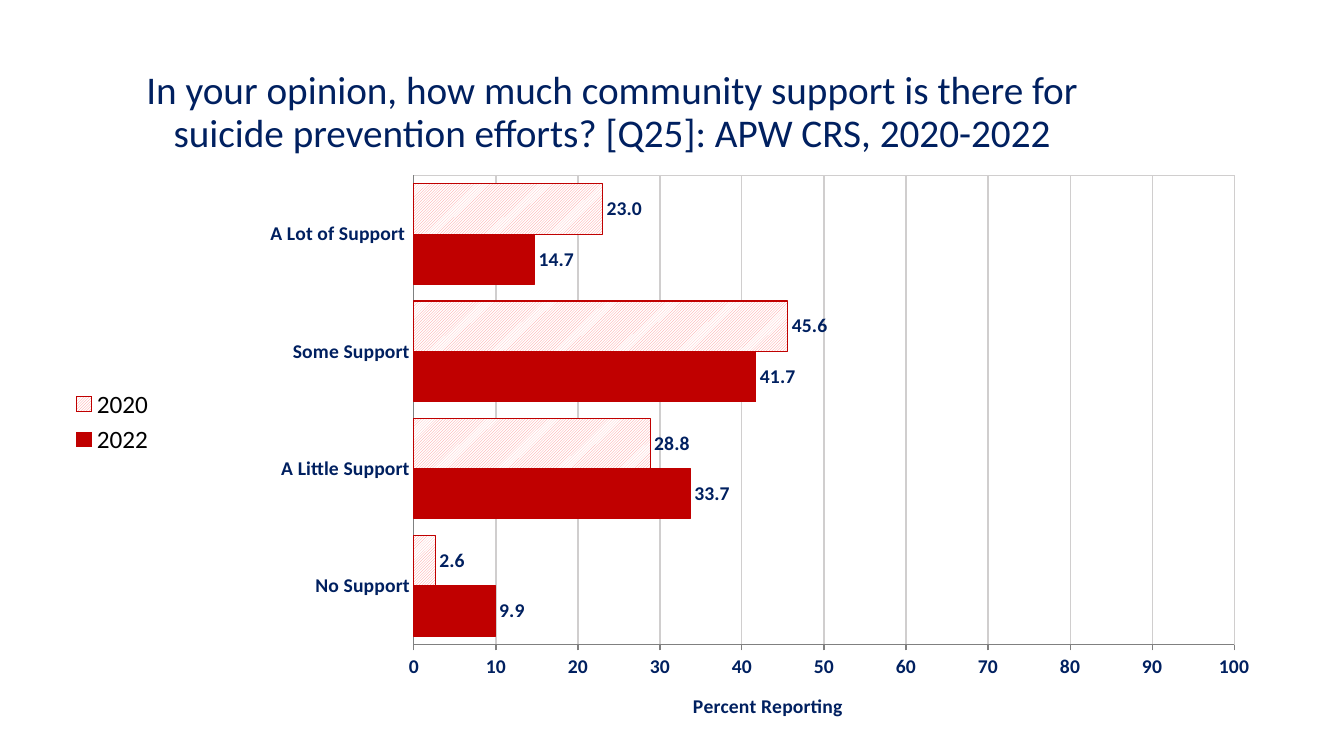
"""Build a slide comparing community support for suicide prevention, 2020 and 2022."""
from lxml import etree
from pptx import Presentation
from pptx.chart.data import CategoryChartData
from pptx.dml.color import RGBColor
from pptx.enum.chart import XL_CHART_TYPE, XL_LABEL_POSITION, XL_LEGEND_POSITION, XL_TICK_MARK
from pptx.enum.dml import MSO_PATTERN
from pptx.enum.text import MSO_ANCHOR, MSO_AUTO_SIZE, PP_ALIGN
from pptx.oxml import parse_xml
from pptx.oxml.ns import qn
from pptx.util import Inches, Pt

BAR = XL_CHART_TYPE.BAR_CLUSTERED
OUT_END = XL_LABEL_POSITION.OUTSIDE_END
LEFT = XL_LEGEND_POSITION.LEFT
NO_TICK, OUT_TICK = XL_TICK_MARK.NONE, XL_TICK_MARK.OUTSIDE
HATCH = MSO_PATTERN.LIGHT_UPWARD_DIAGONAL
MIDDLE, CENTER = MSO_ANCHOR.MIDDLE, PP_ALIGN.CENTER
NO_FIT = MSO_AUTO_SIZE.NONE

TITLE = ("In your opinion, how much community support is there for "
         "suicide prevention efforts? [Q25]: APW CRS, 2020-2022")
CATS = ["No Support", "A Little Support", "Some Support", "A Lot of Support "]
SERIES = {"2022": [9.9, 33.7, 41.7, 14.7], "2020": [2.6, 28.8, 45.6, 23.0]}
AXIS = "Percent Reporting"
FONT = "Calibri"
COLORS = {"navy": "002060", "red": "C00000", "pink": "FF8F8F", "white": "FFFFFF",
          "black": "000000", "grid": "D0CECE", "axis": "808080"}
TITLE_BOX = (0.92, 0.4, 10.3, 1.45)
CHART_BOX = (0.59, 1.24, 12.25, 5.95)
PLOT = {"x": 0.287, "y": 0.085, "w": 0.664, "h": 0.79}
AXIS_SPOT = {"x": 0.51, "y": 0.95}
C_NS = "http://schemas.openxmlformats.org/drawingml/2006/chart"
A_NS = "http://schemas.openxmlformats.org/drawingml/2006/main"


def color(name):
    return RGBColor.from_string(COLORS[name])


def style(font, size, name, bold=False):
    font.name, font.size, font.bold = FONT, Pt(size), bold
    font.color.rgb = color(name)


def outline(line, name):
    line.color.rgb = color(name)
    line.width = Pt(0.75)


def place(node, spot, index, inner=False):
    for old in node.findall(qn("c:layout")):
        node.remove(old)
    layout = etree.Element(qn("c:layout"))
    manual = etree.SubElement(layout, qn("c:manualLayout"))
    if inner:
        etree.SubElement(manual, qn("c:layoutTarget"), val="inner")
    for side in "xy":
        etree.SubElement(manual, qn(f"c:{side}Mode"), val="edge")
    for key, part in spot.items():
        etree.SubElement(manual, qn(f"c:{key}"), val=str(part))
    node.insert(index, layout)


def add_title(slide):
    title = slide.shapes.title
    title.left, title.top, title.width, title.height = map(Inches, TITLE_BOX)
    frame = title.text_frame
    frame.text = TITLE
    frame.auto_size, frame.vertical_anchor, frame.word_wrap = NO_FIT, MIDDLE, True
    para = frame.paragraphs[0]
    para.alignment, para.line_spacing = CENTER, 0.9
    style(para.font, 28, "navy")


def add_bars(slide):
    data = CategoryChartData(number_format="0.0")
    data.categories = CATS
    for name, values in SERIES.items():
        data.add_series(name, values)
    chart = slide.shapes.add_chart(BAR, *map(Inches, CHART_BOX), data).chart
    chart.has_title = False
    style(chart.font, 18, "black")
    chart.has_legend = True
    chart.legend.position, chart.legend.include_in_layout = LEFT, False

    plot = chart.plots[0]
    plot.gap_width, plot.overlap, plot.vary_by_categories = 33, 0, False
    for bars in plot.series:
        fill = bars.format.fill
        if bars.name == "2020":
            fill.patterned()
            fill.pattern = HATCH
            fill.fore_color.rgb, fill.back_color.rgb = color("pink"), color("white")
        else:
            fill.solid()
            fill.fore_color.rgb = color("red")
        outline(bars.format.line, "red")
        labels = bars.data_labels
        labels.show_value, labels.position = True, OUT_END
        labels.number_format, labels.number_format_is_linked = "0.0", False
        style(labels.font, 14, "navy", True)

    cat, val = chart.category_axis, chart.value_axis
    for axis, tick in ((cat, NO_TICK), (val, OUT_TICK)):
        axis.major_tick_mark, axis.minor_tick_mark = tick, NO_TICK
        style(axis.tick_labels.font, 14, "navy", True)
        outline(axis.format.line, "axis")
    val.minimum_scale, val.maximum_scale, val.major_unit = 0, 100, 10
    val.tick_labels.number_format = "0"
    val.tick_labels.number_format_is_linked = False
    val.has_major_gridlines = True
    outline(val.major_gridlines.format.line, "grid")
    para = val.axis_title.text_frame.paragraphs[0]
    para.text = AXIS
    style(para.font, 14, "navy", True)
    place(val.axis_title._element, AXIS_SPOT, 1)

    area = chart._chartSpace.find(".//" + qn("c:plotArea"))
    place(area, PLOT, 0, inner=True)
    area.append(parse_xml(
        f'<c:spPr xmlns:c="{C_NS}" xmlns:a="{A_NS}"><a:noFill/><a:ln w="9525"><a:solidFill>'
        f'<a:srgbClr val="{COLORS["grid"]}"/></a:solidFill></a:ln></c:spPr>'))


def main():
    deck = Presentation()
    deck.slide_width, deck.slide_height = Inches(13.33), Inches(7.5)
    slide = deck.slides.add_slide(deck.slide_layouts[5])
    add_title(slide)
    add_bars(slide)
    deck.save("out.pptx")


if __name__ == "__main__":
    main()
